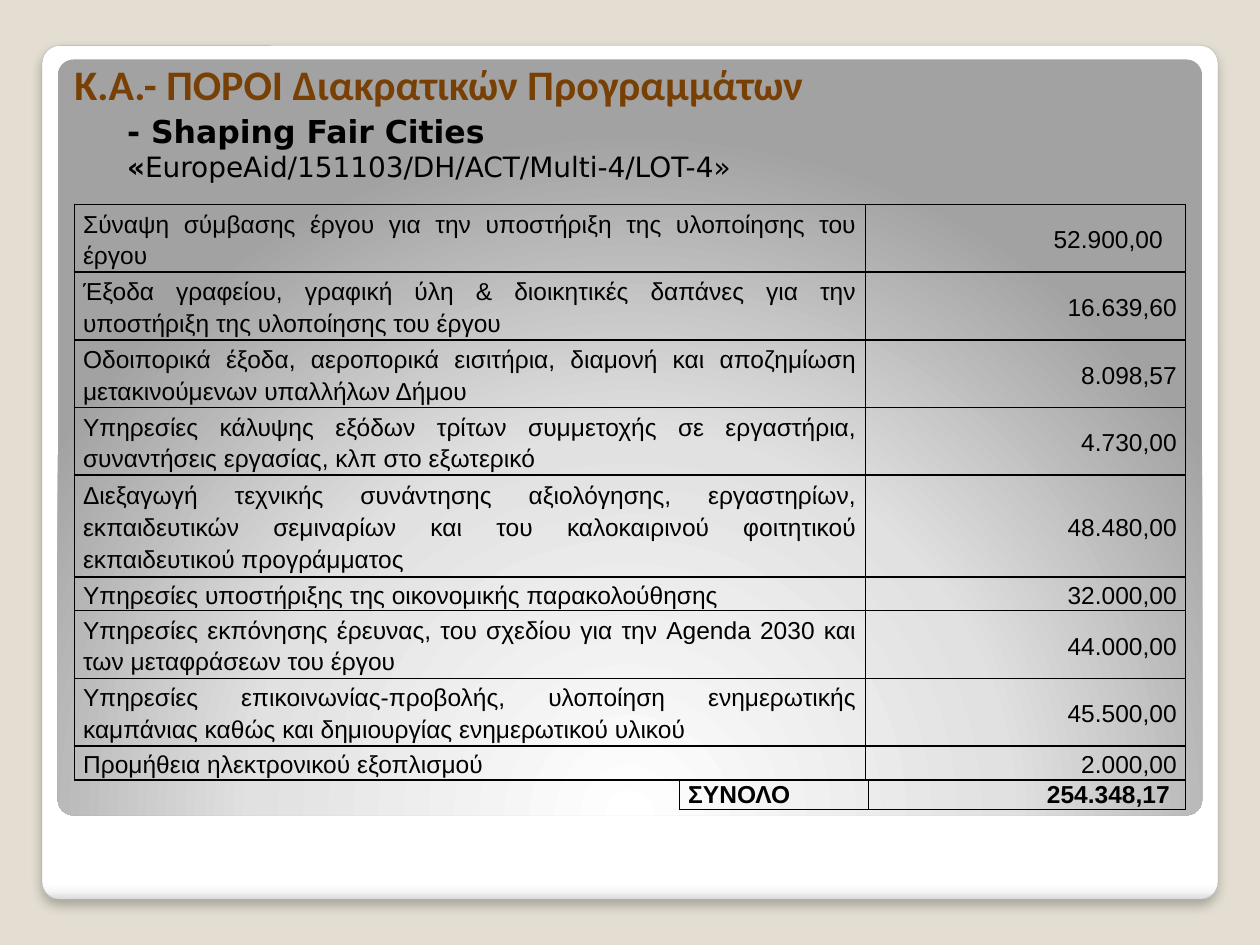
from lxml import etree
from pptx import Presentation
from pptx.dml.color import RGBColor
from pptx.enum.shapes import MSO_SHAPE
from pptx.enum.text import MSO_ANCHOR, MSO_AUTO_SIZE, PP_ALIGN
from pptx.oxml import parse_xml
from pptx.util import Pt

ROUNDED = MSO_SHAPE.ROUNDED_RECTANGLE
MIDDLE, BOTTOM = MSO_ANCHOR.MIDDLE, MSO_ANCHOR.BOTTOM
GROW = MSO_AUTO_SIZE.SHAPE_TO_FIT_TEXT
JUSTIFY, RIGHT = PP_ALIGN.JUSTIFY, PP_ALIGN.RIGHT
NAMESPACE = "http://schemas.openxmlformats.org/drawingml/2006/main"
LINE_HEIGHT = 19.35
CELL_MARGIN = 5

EXPENSES = [
    ("Σύναψη σύμβασης έργου για την υποστήριξη της υλοποίησης του έργου", "52.900,00", 2),
    ("Έξοδα γραφείου, γραφική ύλη & διοικητικές δαπάνες για την υποστήριξη της υλοποίησης του έργου",
     "16.639,60", 2),
    ("Οδοιπορικά έξοδα, αεροπορικά εισιτήρια, διαμονή και αποζημίωση μετακινούμενων υπαλλήλων Δήμου",
     "8.098,57", 2),
    ("Υπηρεσίες κάλυψης εξόδων τρίτων συμμετοχής σε εργαστήρια, συναντήσεις εργασίας, κλπ στο εξωτερικό",
     "4.730,00", 2),
    ("Διεξαγωγή τεχνικής συνάντησης αξιολόγησης, εργαστηρίων, εκπαιδευτικών σεμιναρίων και του "
     "καλοκαιρινού φοιτητικού εκπαιδευτικού προγράμματος", "48.480,00", 3),
    ("Υπηρεσίες υποστήριξης της οικονομικής παρακολούθησης", "32.000,00", 1),
    ("Υπηρεσίες εκπόνησης έρευνας, του σχεδίου για την Agenda 2030 και των μεταφράσεων του έργου",
     "44.000,00", 2),
    ("Υπηρεσίες επικοινωνίας-προβολής, υλοποίηση ενημερωτικής καμπάνιας καθώς και δημιουργίας "
     "ενημερωτικού υλικού", "45.500,00", 2),
    ("Προμήθεια ηλεκτρονικού εξοπλισμού", "2.000,00", 1),
]


def color(value):
    """Turn a hex string into a colour."""
    return RGBColor.from_string(value)


def drawing_element(markup):
    """Parse markup whose root is an element of the drawing namespace."""
    name, rest = markup[1:].split(" ", 1)
    return parse_xml(f'<{name} xmlns:a="{NAMESPACE}" {rest}')


def format_run(run, size, font, value="000000", bold=False):
    """Set the font of one run."""
    run.font.size = Pt(size)
    run.font.name = font
    run.font.bold = bold
    run.font.color.rgb = color(value)


def add_panel(slide, box, stops, direction):
    """Add a rounded panel filled with a gradient."""
    shape = slide.shapes.add_shape(ROUNDED, *map(Pt, box))
    shape.adjustments[0] = 0.021
    shape.line.fill.background()
    shape.shadow.inherit = False
    marks = "".join(
        f'<a:gs pos="{position * 1000}"><a:srgbClr val="{value}"/></a:gs>' for position, value in stops)
    fill = drawing_element(f'<a:gradFill rotWithShape="1"><a:gsLst>{marks}</a:gsLst>{direction}</a:gradFill>')
    shape._element.spPr.insert(2, fill)
    return shape


def add_frame(slide, box):
    """Add the white outer frame with its soft shadow."""
    stops = [(0, "FFFFFF"), (98, "FFFFFF"), (99, "F7F7F7"), (100, "DADADA")]
    frame = add_panel(slide, box, stops, '<a:lin ang="5400000" scaled="0"/>')
    frame.line.color.rgb = color("A4A4A4")
    frame.line.width = Pt(0.16)
    effects = frame._element.spPr.find(f"{{{NAMESPACE}}}effectLst")
    shadow = etree.SubElement(effects, f"{{{NAMESPACE}}}outerShdw", blurRad=str(Pt(6)),
                              dist=str(Pt(4)), dir="5400000", algn="t", rotWithShape="0")
    shade = etree.SubElement(shadow, f"{{{NAMESPACE}}}srgbClr", val="000000")
    etree.SubElement(shade, f"{{{NAMESPACE}}}alpha", val="25000")


def add_content_panel(slide, box):
    """Add the grey panel that glows from below."""
    glow = '<a:path path="circle"><a:fillToRect l="50000" t="175000" r="50000" b="-75000"/></a:path>'
    add_panel(slide, box, [(0, "FFFFFF"), (55, "E1E1E1"), (100, "A2A2A2")], glow)


def add_text_box(slide, box):
    """Add a wrapping text box and return its text frame."""
    text_frame = slide.shapes.add_textbox(*map(Pt, box)).text_frame
    text_frame.word_wrap = True
    text_frame.auto_size = GROW
    return text_frame


def add_title(slide, box):
    """Add the slide title."""
    text_frame = add_text_box(slide, box)
    text_frame.vertical_anchor = BOTTOM
    text_frame.margin_left = text_frame.margin_right = text_frame.margin_bottom = 0
    text_frame.margin_top = Pt(5)
    text_frame.text = "Κ.Α.- ΠΟΡΟΙ Διακρατικών Προγραμμάτων"
    paragraph = text_frame.paragraphs[0]
    paragraph.line_spacing = 1.1
    paragraph.space_after = Pt(6)
    properties = paragraph._p.get_or_add_pPr()
    properties.set("marL", str(Pt(28.8)))
    properties.set("indent", str(Pt(-28.8)))
    format_run(paragraph.runs[0], 24, "Calibri", "784004", True)


def add_subtitle(slide, box):
    """Add the programme name and its reference."""
    paragraph = add_text_box(slide, box).paragraphs[0]
    parts = [("- Shaping Fair Cities ", 18, True), ("«", 16, True),
             ("EuropeAid/151103/DH/ACT/Multi-4/LOT-4»", 16, False)]
    for text, size, bold in parts:
        run = paragraph.add_run()
        run.text = text
        format_run(run, size, "DejaVu Sans", bold=bold)


def fill_cell(cell, text, alignment, spacing, bold, gap=0):
    """Write one bordered, unfilled cell."""
    cell.text = text
    cell.vertical_anchor = MIDDLE
    cell.margin_left = Pt(CELL_MARGIN)
    cell.margin_right = Pt(CELL_MARGIN + gap)
    cell.margin_top = cell.margin_bottom = 0
    paragraph = cell.text_frame.paragraphs[0]
    paragraph.alignment = alignment
    paragraph.line_spacing = spacing
    format_run(paragraph.runs[0], 14, "Arial", bold=bold)
    cell.fill.background()
    for index, side in enumerate("LRTB"):
        border = drawing_element(
            f'<a:ln{side} w="{Pt(1)}"><a:solidFill><a:srgbClr val="000000"/></a:solidFill></a:ln{side}>')
        cell._tc.tcPr.insert(index, border)


def add_amount_table(slide, box, amount_width, rows, heights, spacing=1.0, bold=False, first_gap=0):
    """Add a table of labels and right-aligned amounts."""
    table = slide.shapes.add_table(len(rows), 2, *map(Pt, box)).table
    table.first_row = table.horz_banding = False
    table.columns[0].width = Pt(box[2] - amount_width)
    table.columns[1].width = Pt(amount_width)
    for index, (label, amount) in enumerate(rows):
        table.rows[index].height = Pt(heights[index])
        fill_cell(table.cell(index, 0), label, JUSTIFY, spacing, bold)
        fill_cell(table.cell(index, 1), amount, RIGHT, spacing, bold, 0 if index else first_gap)


def main():
    """Build and save the slide."""
    presentation = Presentation()
    presentation.slide_width, presentation.slide_height = Pt(720), Pt(540)
    slide = presentation.slides.add_slide(presentation.slide_layouts[6])
    slide.background.fill.solid()
    slide.background.fill.fore_color.rgb = color("E3DED1")
    add_frame(slide, (24, 26, 672, 488))
    add_content_panel(slide, (33, 34, 654, 432))
    add_title(slide, (42.5, 26, 648, 36))
    add_subtitle(slide, (65.5, 60.5, 510.5, 48.5))
    heights = [lines * LINE_HEIGHT for _, _, lines in EXPENSES]
    rows = [(label, amount) for label, amount, _ in EXPENSES]
    add_amount_table(slide, (42.5, 116.8, 635, sum(heights)), 183, rows, heights, 1.15, first_gap=8)
    add_amount_table(slide, (388.3, 445.8, 289.2, 16.5), 181.2, [("ΣΥΝΟΛΟ", "254.348,17")], [16.5],
                     bold=True, first_gap=4)
    presentation.save("out.pptx")


if __name__ == "__main__":
    main()
